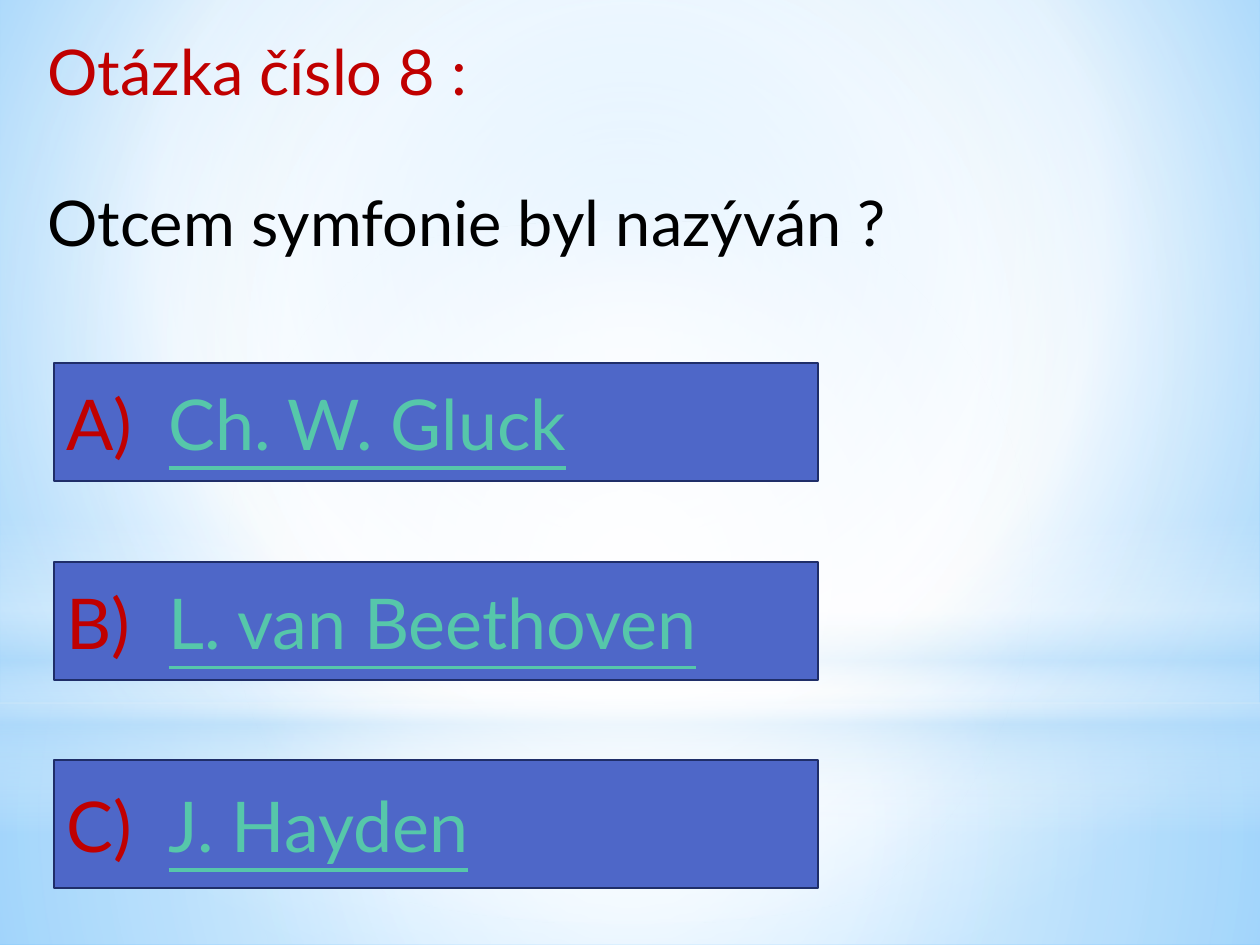
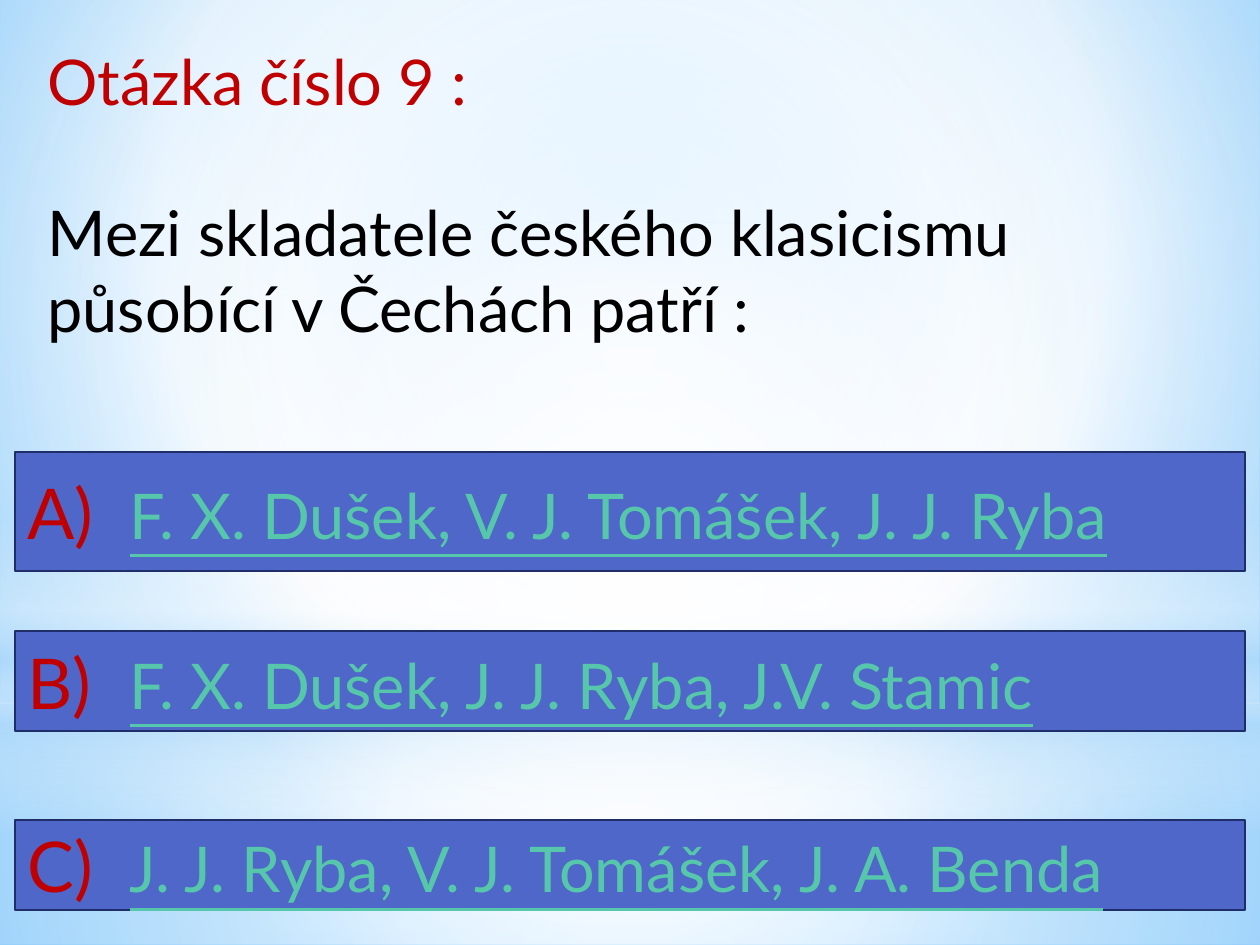
"""Build two quiz slides on music of the classical era."""
from lxml.etree import SubElement as Sub
from pptx import Presentation
from pptx.dml.color import RGBColor as Rgb
from pptx.enum.shapes import MSO_SHAPE as Form
from pptx.enum.text import MSO_ANCHOR as Anchor, MSO_AUTO_SIZE as Auto, PP_ALIGN as Align
from pptx.oxml.ns import qn
from pptx.util import Pt

PX = 9144
FONT = "Lato"
HUES = {
    "white": "FFFFFF", "sky": "9ED5FF", "deep": "5BB9FF", "pale": "B4DCFA",
    "red": "C00000", "black": "000000", "bar": "4E67C8", "edge": "1F2E69", "mint": "56C7AA",
}


def shade(fill, home, stops, focus):
    """Give home a gradient: round if it has a focus, else running down."""
    fill.solid()
    old = home.find(qn("a:solidFill"))
    grad = old.makeelement(qn("a:gradFill"), {"rotWithShape": "1"})
    home.replace(old, grad)
    row = Sub(grad, qn("a:gsLst"))
    for pos, hue, alpha in stops:
        stop = Sub(row, qn("a:gs"), pos=str(pos * 1000))
        tint = Sub(stop, qn("a:srgbClr"), val=HUES[hue])
        Sub(tint, qn("a:alpha"), val=str(alpha * 1000))
    if focus:
        sides = {side: str(part * 1000) for side, part in zip("ltrb", focus)}
        Sub(Sub(grad, qn("a:path"), path="circle"), qn("a:fillToRect"), sides)
    else:
        Sub(grad, qn("a:lin"), ang="5400000", scaled="0")


def write(para, text, size, hue, line=False):
    """Add a run of text to a paragraph."""
    run = para.add_run()
    run.text = text
    look = {"name": FONT, "size": Pt(size), "underline": line}
    for key, value in look.items():
        setattr(run.font, key, value)
    run.font.color.rgb = Rgb.from_string(HUES[hue])


deck = Presentation()
deck.slide_width, deck.slide_height = 1000 * PX, 750 * PX
blank = deck.slide_layouts[6]
master = deck.slide_master

ground = master.background.fill
ground.solid()
shade(ground, master.element.find(".//" + qn("p:bgPr")),
      [(0, "sky", 100), (60, "white", 100), (100, "deep", 100)], (20, 10, 20, 60))

MID = (50, 50, 50, 50)
GLOWS = [
    (Form.RECTANGLE, 558, 192, MID, [(0, "white", 91), (37, "white", 76), (100, "pale", 79)]),
    (Form.RECTANGLE, 0, 558, MID, [(0, "white", 89), (48, "white", 62), (100, "pale", 79)]),
    (Form.RECTANGLE, 412, 250, None, [(0, "white", 0), (29, "white", 30), (45, "pale", 40),
                                      (55, "white", 26), (65, "pale", 60), (100, "white", 0)]),
    (Form.OVAL, 175, 558, MID, [(0, "white", 100), (56, "white", 0)]),
]

QUIZ = [
    {"head": "Otázka číslo 8 :", "ask": "Otcem symfonie byl nazýván ?",
     "box": (28, 21, 945, 192), "left": 43, "wide": 606, "size": 40,
     "rows": [(288, 94, "Ch. W. Gluck"), (446, 94, "L. van Beethoven"), (603, 102, "J. Hayden")]},
    {"head": "Otázka číslo 9 :",
     "ask": "Mezi skladatele českého klasicismu působící v Čechách patří :",
     "box": (28, 29, 937, 252), "left": 12, "wide": 976, "size": 36,
     "rows": [(359, 94, "F. X. Dušek, V. J. Tomášek, J. J. Ryba"),
              (501, 79, "F. X. Dušek, J. J. Ryba, J.V. Stamic"),
              (651, 71, "J. J. Ryba, V. J. Tomášek, J. A. Benda")]},
]
slides = [deck.slides.add_slide(blank) for quiz in QUIZ]

for form, top, high, focus, stops in GLOWS:
    glow = slides[0].shapes.add_shape(form, 0, top * PX, 1000 * PX, high * PX)
    shade(glow.fill, glow.element.spPr, stops, focus)
    glow.line.fill.background()
    glow.shadow.inherit = False
    master.shapes.element.append(glow.element)

for slide, quiz in zip(slides, QUIZ):
    box = slide.shapes.add_textbox(*(n * PX for n in quiz["box"]))
    frame = box.text_frame
    for key, value in {"word_wrap": True, "auto_size": Auto.SHAPE_TO_FIT_TEXT}.items():
        setattr(frame, key, value)
    write(frame.paragraphs[0], quiz["head"], 36, "red")
    para = frame.add_paragraph()
    para.space_before = Pt(43)
    write(para, quiz["ask"], 36, "black")

    for mark, (top, high, name) in zip("ABC", quiz["rows"]):
        bar = slide.shapes.add_shape(
            Form.RECTANGLE, quiz["left"] * PX, top * PX, quiz["wide"] * PX, high * PX)
        bar.shadow.inherit = False
        bar.fill.solid()
        bar.fill.fore_color.rgb = Rgb.from_string(HUES["bar"])
        bar.line.color.rgb = Rgb.from_string(HUES["edge"])
        bar.line.width = Pt(1.25)
        frame = bar.text_frame
        for key, value in {"word_wrap": True, "vertical_anchor": Anchor.MIDDLE}.items():
            setattr(frame, key, value)
        para = frame.paragraphs[0]
        para.alignment = Align.LEFT
        props = para._p.get_or_add_pPr()
        for key, value in {"marL": 81, "indent": -81}.items():
            props.set(key, str(value * PX))
        write(para, f"{mark})\t", 40, "red")
        write(para, name, quiz["size"], "mint", True)

deck.save("out.pptx")
